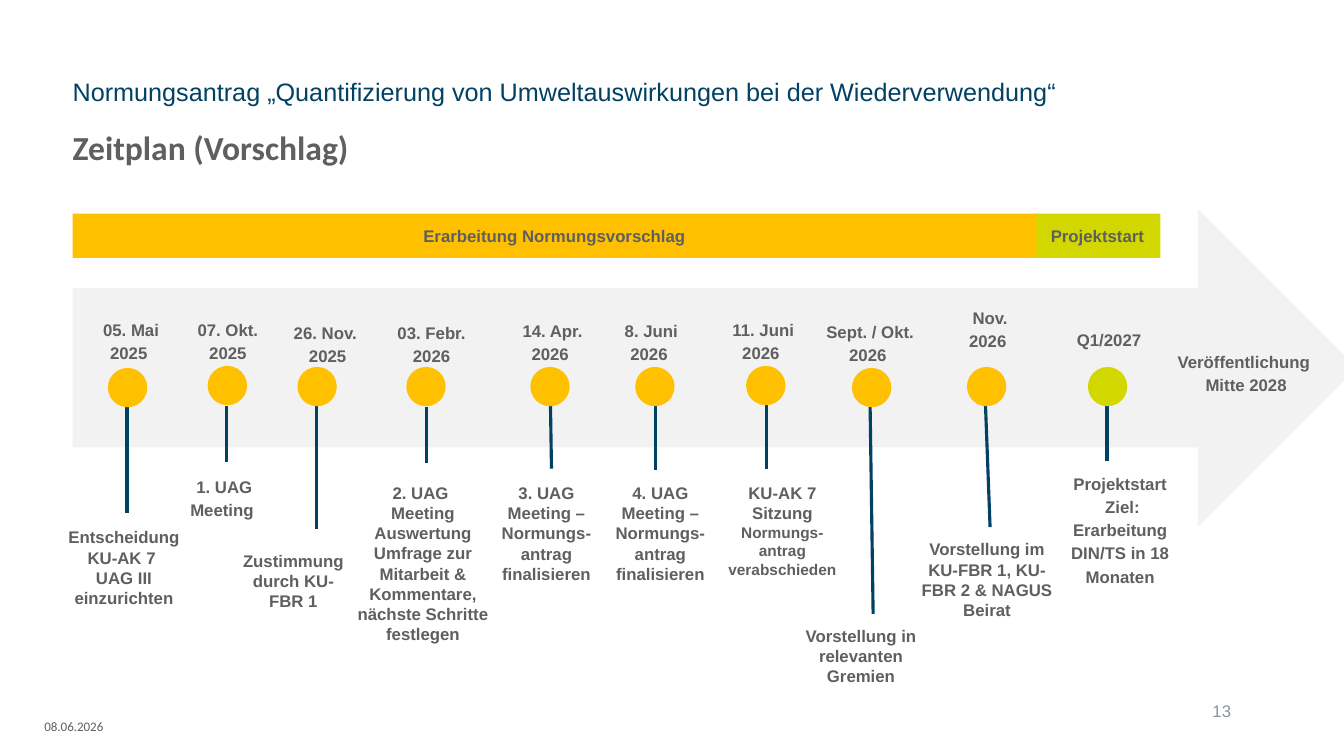
import pptx
import pptx.util
import pptx.dml.color
import pptx.enum.shapes
import pptx.enum.text
import pptx.oxml.ns
import lxml.etree

RGB = pptx.dml.color.RGBColor
KIND = pptx.enum.shapes.MSO_SHAPE
ALIGN = pptx.enum.text.PP_ALIGN
ANCHOR = pptx.enum.text.MSO_ANCHOR
FIT = pptx.enum.text.MSO_AUTO_SIZE

GRAY = RGB(0x5F, 0x5F, 0x5F)
PALE = RGB(0xF2, 0xF2, 0xF2)
GOLD = RGB(0xFF, 0xC0, 0x00)
LIME = RGB(0xD2, 0xD7, 0x00)
NAVY = RGB(0x00, 0x41, 0x64)
SLATE = RGB(0x8C, 0x93, 0x9F)

SCALE = 9144  # EMU per px, 100 px to the inch
DOT = 39
DATE_W = 148

# date: left, top, lines; dot: left, top, colour; stem: from, to;
# note: left, top, width, height, line spacing, paragraphs
STEPS = [
    ((56, 309, ["05. Mai", "2025 "]), (107, 365, GOLD), (126, 400, 126, 509),
     (41, 518, 164, 91, 1, ["Entscheidung KU-AK 7 ", "UAG III einzurichten"])),
    ((152, 309, ["07. Okt.", "2025"]), (206, 363, GOLD), (225, 403, 225, 458),
     (153, 465, 139, 55, 1.15, ["1. UAG Meeting "])),
    ((251, 312, ["26. Nov. ", "2025"]), (295, 364, GOLD), (314, 390, 314, 525),
     (230, 541, 122, 71, 1, ["Zustimmung ", "durch KU-FBR 1"])),
    ((354, 312, ["03. Febr.", "2026"]), (403, 364, GOLD), (423, 404, 423, 459),
     (327, 474, 185, 174, 1,
      ["2. UAG \nMeeting",
       "Auswertung Umfrage zur Mitarbeit & Kommentare, nächste Schritte festlegen"])),
    ((474, 310, ["14. Apr.", "2026 "]), (526, 364, GOLD), (546, 403, 547, 465),
     (478, 474, 128, 111, 1, ["3. UAG Meeting – Normungs-antrag finalisieren"])),
    ((572, 310, ["8. Juni", "2026 "]), (630, 364, GOLD), (650, 399, 650, 466),
     (591, 474, 128, 111, 1, ["4. UAG Meeting – Normungs-antrag finalisieren"])),
    ((683, 309, ["11. Juni", "2026 "]), (740, 363, GOLD), (760, 398, 760, 465),
     (710, 474, 132, 106, 1,
      ["KU-AK 7 Sitzung", ("Normungs-antrag verabschieden", 11)])),
    ((789, 311, ["Sept. / Okt.", "2026 "]), (845, 365, GOLD), (863, 404, 866, 609),
     (772, 616, 164, 71, 1, ["Vorstellung in relevanten Gremien"])),
    ((908, 297, ["Nov.", "2026 "]), (959, 364, GOLD), (977, 390, 982, 523),
     (902, 530, 154, 91, 1, ["Vorstellung im KU-FBR 1, KU-FBR 2 & NAGUS Beirat"])),
    ((1026, 319, ["Q1/2027"]), (1079, 364, LIME), (1098, 402, 1098, 457),
     (1048, 462, 126, 124, 1.15,
      ["Projektstart", " Ziel: Erarbeitung DIN/TS in 18 Monaten"])),
]


class Deck:
    def __init__(self, wide, high):
        self.file = pptx.Presentation()
        self.file.slide_width, self.file.slide_height = self.emu(wide, high)
        self.slide = self.file.slides.add_slide(self.file.slide_layouts[1])
        self.items = self.slide.shapes

    def emu(self, *px):
        return [pptx.util.Emu(n * SCALE) for n in px]

    def fill_text(self, frame, paras, size=12, color=GRAY, font="Arial", bold=True,
                  align=ALIGN.CENTER, lead=1, anchor=ANCHOR.TOP, inset=None):
        """Fill a text frame; a paragraph is a string or (string, size)."""
        frame.word_wrap = True
        frame.vertical_anchor = anchor
        if inset is not None:
            frame.margin_left = frame.margin_right = inset
            frame.margin_top = frame.margin_bottom = inset
        for i, para in enumerate(paras):
            words, points = (para, size) if isinstance(para, str) else para
            line = frame.add_paragraph() if i else frame.paragraphs[0]
            line.alignment = align
            line.line_spacing = lead
            line.space_before = pptx.util.Pt(0)
            for j, part in enumerate(words.split("\n")):
                if j:
                    line.add_line_break()
                run = line.add_run()
                run.text = part
                run.font.size = pptx.util.Pt(points)
                run.font.name = font
                run.font.bold = bold
                run.font.color.rgb = color

    def label(self, box, paras, fit=FIT.SHAPE_TO_FIT_TEXT, **style):
        frame = self.items.add_textbox(*self.emu(*box)).text_frame
        self.fill_text(frame, paras, **style)
        frame.auto_size = fit

    def holder(self, shape, box, words, **style):
        """Move and fill a placeholder as one unbulleted line."""
        shape.left, shape.top, shape.width, shape.height = self.emu(*box)
        frame = shape.text_frame
        props = frame.paragraphs[0]._p.get_or_add_pPr()
        props.set("marL", "0")
        props.set("indent", "0")
        lxml.etree.SubElement(props, pptx.oxml.ns.qn("a:buNone"))
        self.fill_text(frame, [words], align=ALIGN.LEFT, lead=0.9, inset=0, **style)
        frame.auto_size = FIT.NONE

    def shape(self, kind, box, fill, words=None):
        item = self.items.add_shape(kind, *self.emu(*box))
        item.shadow.inherit = False
        item.fill.solid()
        item.fill.fore_color.rgb = fill
        item.line.fill.background()
        if words:
            self.fill_text(item.text_frame, [words], anchor=ANCHOR.MIDDLE)

    def stem(self, ends):
        line = self.items.add_connector(
            pptx.enum.shapes.MSO_CONNECTOR.STRAIGHT, *self.emu(*ends))
        line.line.color.rgb = NAVY
        line.line.width = pptx.util.Pt(2.25)
        lxml.etree.SubElement(line._element.spPr, pptx.oxml.ns.qn("a:effectLst"))

    def step(self, date, dot, ends, note):
        left, top, lines = date
        self.label((left, top, DATE_W, 8 + 23 * len(lines)), lines, lead=1.15)
        self.stem(ends)
        self.shape(KIND.OVAL, (*dot[:2], DOT, DOT), dot[2])
        self.label(note[:4], note[5], lead=note[4])


def main():
    deck = Deck(1333, 750)
    title, body = deck.slide.placeholders
    deck.holder(title, (72, 114, 1078, 52), "Zeitplan (Vorschlag)",
                size=24, font="Calibri", anchor=ANCHOR.BOTTOM)
    deck.holder(body, (72, 79, 1079, 30),
                "Normungsantrag „Quantifizierung von Umweltauswirkungen "
                "bei der Wiederverwendung“", size=18, color=NAVY, bold=False)

    deck.shape(KIND.RIGHT_ARROW, (72, 207, 1274, 316), PALE)
    deck.shape(KIND.RECTANGLE, (1026, 212, 125, 44), LIME, "Projektstart")
    deck.shape(KIND.RECTANGLE, (72, 212, 956, 44), GOLD,
               "Erarbeitung Normungsvorschlag")
    for step in STEPS:
        deck.step(*step)
    deck.label((1143, 341, 186, 55), ["Veröffentlichung ", "Mitte 2028"], lead=1.15)

    deck.label((44, 711, 131, 20), ["08.06.2026"], fit=FIT.NONE, size=9.3,
               font="Calibri", bold=False, align=ALIGN.LEFT,
               anchor=ANCHOR.MIDDLE, inset=0)
    deck.label((1188, 694, 43, 23), ["13"], fit=FIT.NONE, color=SLATE,
               bold=False, align=ALIGN.RIGHT, anchor=ANCHOR.MIDDLE)
    deck.file.save("out.pptx")


if __name__ == "__main__":
    main()
